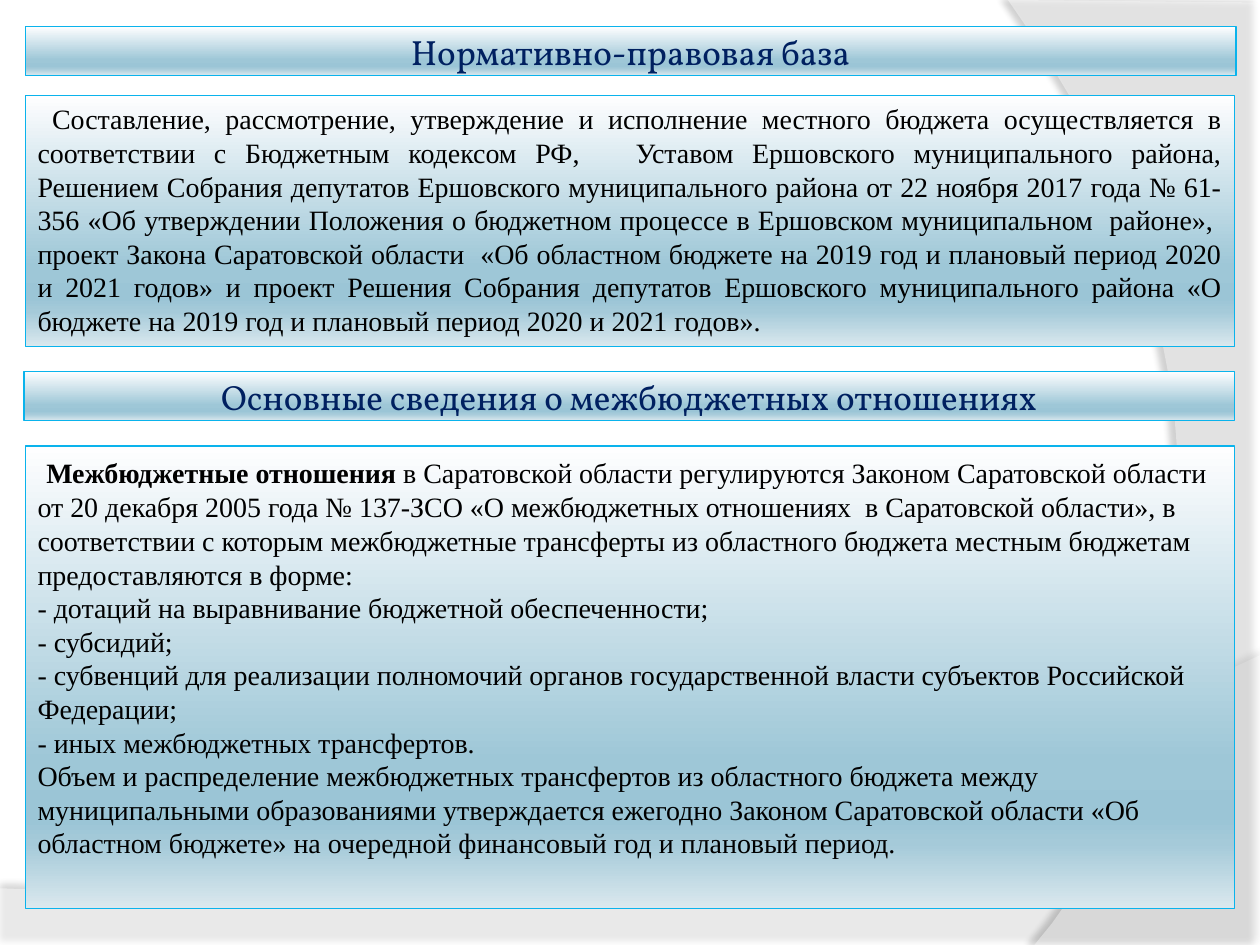
from lxml import etree
from pptx import Presentation
from pptx.dml.color import RGBColor
from pptx.enum.shapes import MSO_SHAPE
from pptx.enum.text import MSO_ANCHOR, MSO_AUTO_SIZE, PP_ALIGN
from pptx.oxml.ns import qn
from pptx.util import Inches, Pt

RECTANGLE = MSO_SHAPE.RECTANGLE
TOP, MIDDLE = MSO_ANCHOR.TOP, MSO_ANCHOR.MIDDLE
LEFT, CENTER, JUSTIFY = PP_ALIGN.LEFT, PP_ALIGN.CENTER, PP_ALIGN.JUSTIFY
GROW, FIXED = MSO_AUTO_SIZE.SHAPE_TO_FIT_TEXT, MSO_AUTO_SIZE.NONE

HEADING = {"name": "Vollkorn", "size": Pt(20), "color": "002060"}
BODY = {"name": "Times New Roman", "size": Pt(16), "color": "000000"}
BOLD = {**BODY, "bold": True}
INDENT = {**BODY, "name": "Arial", "size": Pt(18)}

LEGAL_BASIS = (
    " Составление, рассмотрение, утверждение и исполнение местного бюджета осуществляется "
    "в соответствии с Бюджетным кодексом РФ,   Уставом Ершовского муниципального района, "
    "Решением Собрания депутатов Ершовского муниципального района от 22 ноября 2017 года "
    "№ 61-356 «Об утверждении Положения о бюджетном процессе в Ершовском муниципальном  "
    "районе»,  проект Закона Саратовской области  «Об областном бюджете на 2019 год и "
    "плановый период 2020 и 2021 годов» и проект Решения Собрания депутатов Ершовского "
    "муниципального района «О бюджете на 2019 год и плановый период 2020 и 2021 годов»."
)
RELATIONS_LAW = (
    " в Саратовской области регулируются Законом Саратовской области  от 20 декабря 2005 "
    "года № 137-ЗСО «О межбюджетных отношениях  в Саратовской области», в соответствии с "
    "которым межбюджетные трансферты из областного бюджета местным бюджетам "
    "предоставляются в форме:"
)
TRANSFERS = [
    "- дотаций на выравнивание бюджетной обеспеченности;",
    "- субсидий;",
    "- субвенций для реализации полномочий органов государственной власти субъектов "
    "Российской Федерации;",
    "- иных межбюджетных трансфертов.",
    "Объем и распределение межбюджетных трансфертов из областного бюджета между "
    "муниципальными образованиями утверждается ежегодно Законом Саратовской области "
    "«Об областном бюджете» на очередной финансовый год и плановый период.",
]


def rgb(value):
    return RGBColor.from_string(value)


def curve(start, first, second, end, steps=24):
    points = []
    for step in range(steps + 1):
        t = step / steps
        weights = ((1 - t) ** 3, 3 * t * (1 - t) ** 2, 3 * t * t * (1 - t), t ** 3)
        points.append(tuple(sum(w * p[axis] for w, p in zip(weights, (start, first, second, end)))
                            for axis in (0, 1)))
    return points


class BudgetSlide:
    """Holds the panel style and the slide being filled."""

    edge = "0AB3EC"
    stops = [(0, "FEFEFF"), (68, "9EC7D7"), (81, "9BC5D6"), (86, "A5CAD9"), (100, "DAE8EE")]

    def __init__(self, deck):
        self.slide = deck.slides.add_slide(deck.slide_layouts[6])

    def wave(self, points, opacity, shadow, blur, distance, angle):
        corners = [(Inches(x), Inches(y)) for x, y in points]
        builder = self.slide.shapes.build_freeform(*corners[0])
        builder.add_line_segments(corners[1:], close=True)
        shape = builder.convert_to_shape()
        shape.fill.solid()
        shape.fill.fore_color.rgb = rgb("FFFFFF")
        shape.line.fill.background()
        shape.shadow.inherit = False
        properties = shape._element.spPr
        self.alpha(properties.find(".//" + qn("a:srgbClr")), opacity)
        outer = etree.SubElement(properties.find(qn("a:effectLst")), qn("a:outerShdw"),
                                 blurRad=str(Pt(blur)), dist=str(Pt(distance)),
                                 dir=str(angle * 60000), algn="ctr", rotWithShape="0")
        self.alpha(etree.SubElement(outer, qn("a:srgbClr"), val="000000"), shadow)

    def alpha(self, color, percent):
        etree.SubElement(color, qn("a:alpha"), val=str(percent * 1000))

    def panel(self, left, top, width, height):
        box = self.slide.shapes.add_shape(RECTANGLE, Inches(left), Inches(top),
                                          Inches(width), Inches(height))
        box.shadow.inherit = False
        box.fill.gradient()
        box.fill.gradient_angle = 270
        stop_list = box._element.spPr.find(".//" + qn("a:gsLst"))
        for stop in list(stop_list):
            stop_list.remove(stop)
        for position, color in self.stops:
            stop = etree.SubElement(stop_list, qn("a:gs"), pos=str(position * 1000))
            etree.SubElement(stop, qn("a:srgbClr"), val=color)
        box.line.color.rgb = rgb(self.edge)
        box.line.width = Pt(0.75)
        return box

    def fill_text(self, box, paragraphs, align, frame_format):
        frame = box.text_frame
        for name, value in {"word_wrap": True, **frame_format}.items():
            setattr(frame, name, value)
        for index, spans in enumerate(paragraphs):
            para = frame.add_paragraph() if index else frame.paragraphs[0]
            para.alignment = align
            for text, style in spans:
                span = para.add_run()
                span.text = text
                for name, value in style.items():
                    if name == "color":
                        span.font.color.rgb = rgb(value)
                    else:
                        setattr(span.font, name, value)

    def heading(self, left, top, text):
        margins = {f"margin_{side}": Inches(0.05) for side in ("left", "top", "right", "bottom")}
        self.fill_text(self.panel(left, top, 9.61, 0.39), [[(text, HEADING)]], CENTER,
                       {"vertical_anchor": MIDDLE, "auto_size": FIXED, **margins})

    def body(self, top, height, paragraphs, align):
        self.fill_text(self.panel(0.2, top, 9.6, height), paragraphs, align,
                       {"vertical_anchor": TOP, "auto_size": GROW})


def main():
    deck = Presentation()
    deck.slide_width, deck.slide_height = Inches(10), Inches(7.5)
    page = BudgetSlide(deck)
    page.wave([(0, 7.05), (0, 7.51), (10, 7.51)]
              + curve((10, 5.2), (5.59, 7.29), (3.91, 7.19), (0, 7.05))[:-1],
              45, 35, 4, 3.5, 270)
    page.wave([(10, 0.02), (10, 7.5)]
              + curve((8.21, 7.5), (9.35, 6.19), (10.18, 3), (8, 0)),
              40, 45, 4, 4, 180)
    page.heading(0.2, 0.21, "Нормативно-правовая база")
    page.body(0.76, 1.99, [[(LEGAL_BASIS, BODY)]], JUSTIFY)
    page.heading(0.19, 2.95, "Основные сведения о межбюджетных отношениях")
    opening = [(" ", INDENT), ("Межбюджетные отношения", BOLD), (RELATIONS_LAW, BODY)]
    page.body(3.54, 3.67, [opening] + [[(text, BODY)] for text in TRANSFERS], LEFT)
    deck.save("out.pptx")


if __name__ == "__main__":
    main()
